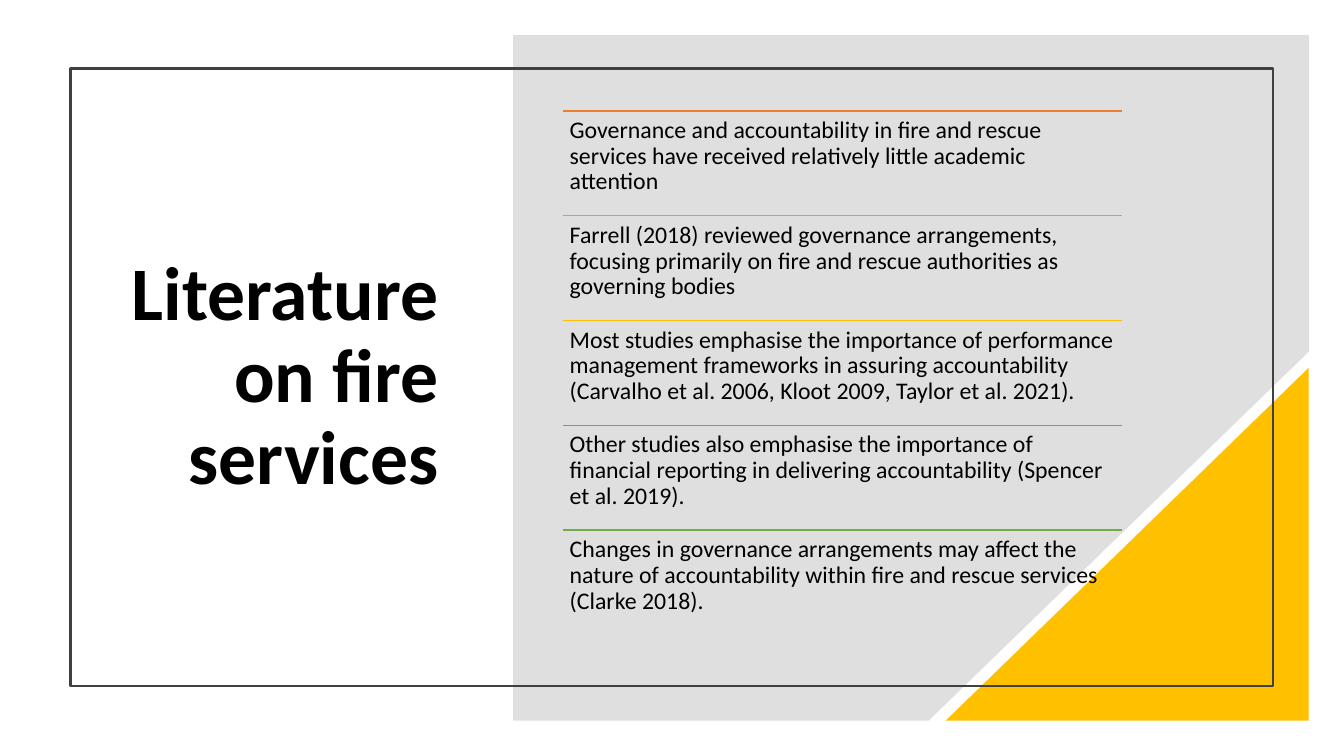
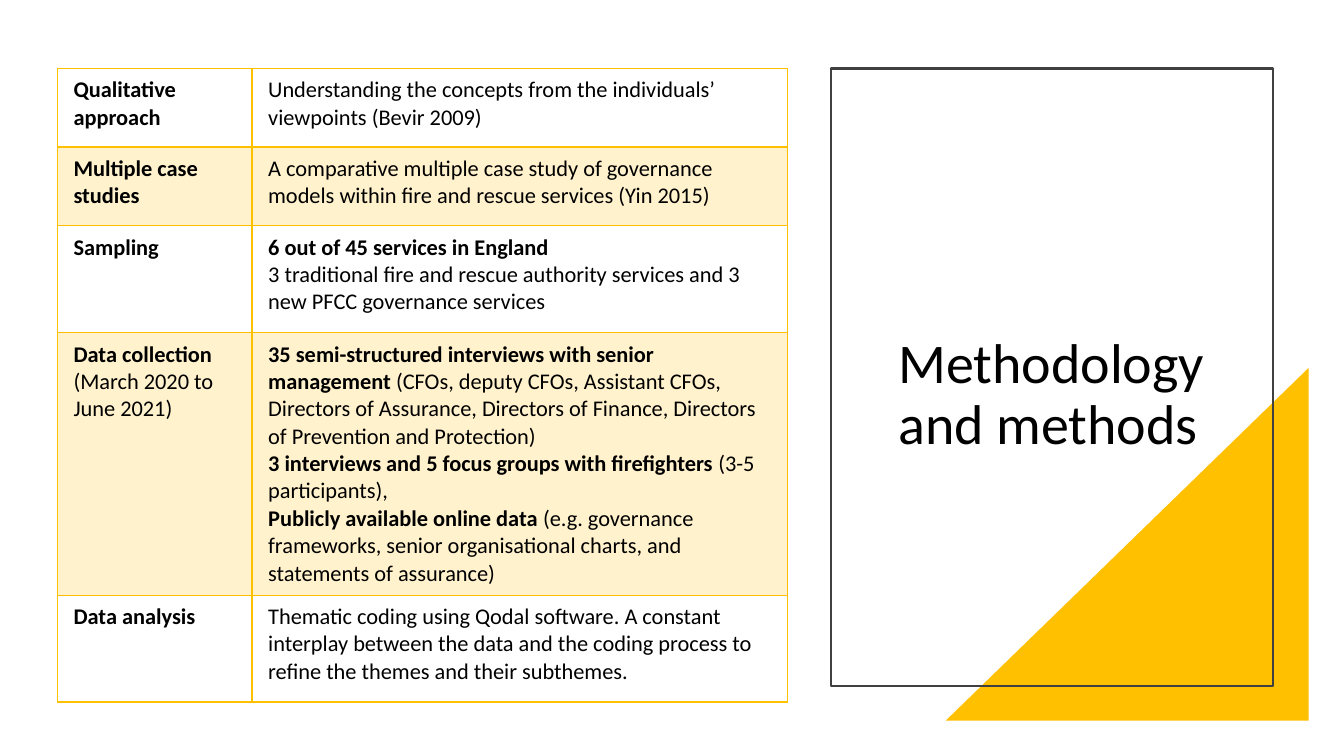
from dataclasses import dataclass

import lxml.etree
import pptx
import pptx.dml.color
import pptx.enum.shapes
import pptx.enum.text
import pptx.oxml.ns
import pptx.util

Inches = pptx.util.Inches
Pt = pptx.util.Pt
RGBColor = pptx.dml.color.RGBColor
MSO_SHAPE = pptx.enum.shapes.MSO_SHAPE
MSO_ANCHOR = pptx.enum.text.MSO_ANCHOR
PP_ALIGN = pptx.enum.text.PP_ALIGN
qn = pptx.oxml.ns.qn

FONT = "Calibri"
BLACK = RGBColor(0x00, 0x00, 0x00)
FRAME = RGBColor(0x40, 0x40, 0x40)
PANEL = RGBColor(0xDF, 0xDF, 0xDF)
GOLD = RGBColor(0xFF, 0xC0, 0x00)
PALE_GOLD = RGBColor(0xFF, 0xF2, 0xCC)
ORANGE = RGBColor(0xED, 0x7D, 0x31)
GREY = RGBColor(0xA5, 0xA5, 0xA5)
BLUE = RGBColor(0x5B, 0x9B, 0xD5)
GREEN = RGBColor(0x70, 0xAD, 0x47)

FRAME_TOP, FRAME_RIGHT, FRAME_HEIGHT = 0.68, 12.63, 6.13
PANEL_OUTLINE = [(5.09, 0.35), (12.98, 0.35), (12.98, 3.49), (9.21, 7.15), (5.09, 7.15)]
FINDING_LEFT, FINDING_TOP, FINDING_WIDTH, FINDING_STEP = 5.58, 1.1, 5.55, 1.04


@dataclass(frozen=True)
class Box:
    left: float
    top: float
    width: float
    height: float

    def lengths(self) -> tuple:
        return tuple(Inches(v) for v in (self.left, self.top, self.width, self.height))


@dataclass(frozen=True)
class Finding:
    color: RGBColor
    text: str


@dataclass(frozen=True)
class Para:
    bold: str = ""
    plain: str = ""


@dataclass(frozen=True)
class MethodRow:
    height: float
    label: list[Para]
    detail: list[Para]


FINDINGS = [
    Finding(ORANGE, "Governance and accountability in fire and rescue services have "
            "received relatively little academic attention"),
    Finding(GREY, "Farrell (2018) reviewed governance arrangements, focusing primarily "
            "on fire and rescue authorities as governing bodies"),
    Finding(GOLD, "Most studies emphasise the importance of performance management "
            "frameworks in assuring accountability (Carvalho et al. 2006, Kloot 2009, "
            "Taylor et al. 2021)."),
    Finding(BLUE, "Other studies also emphasise the importance of financial reporting "
            "in delivering accountability (Spencer et al. 2019)."),
    Finding(GREEN, "Changes in governance arrangements may affect the nature of "
            "accountability within fire and rescue services (Clarke 2018)."),
]

METHODS = [
    MethodRow(0.78, [Para("Qualitative approach")], [
        Para(plain="Understanding the concepts from the individuals’ viewpoints (Bevir 2009)")]),
    MethodRow(0.78, [Para("Multiple case studies")], [
        Para(plain="A comparative multiple case study of governance models within fire "
             "and rescue services (Yin 2015)")]),
    MethodRow(1.06, [Para("Sampling")], [
        Para("6 out of 45 services in England"),
        Para(plain="3 traditional fire and rescue authority services and 3 new PFCC "
             "governance services")]),
    MethodRow(2.6, [Para("Data collection"), Para(plain="(March 2020 to June 2021)")], [
        Para("35 semi-structured interviews with senior management ",
             "(CFOs, deputy CFOs, Assistant CFOs, Directors of Assurance, Directors of "
             "Finance, Directors of Prevention and Protection)"),
        Para("3 interviews and 5 focus groups with firefighters ", "(3-5 participants),"),
        Para("Publicly available online data ",
             "(e.g. governance frameworks, senior organisational charts, and statements "
             "of assurance)")]),
    MethodRow(1.06, [Para("Data analysis")], [
        Para(plain="Thematic coding using Qodal software. A constant interplay between the "
             "data and the coding process to refine the themes and their subthemes.")]),
]


def style_paragraph(p, size: float, bold: bool | None = None) -> None:
    p.font.name = FONT
    p.font.size = Pt(size)
    p.font.bold = bold
    p.font.color.rgb = BLACK


def set_title(s, text: str, box: Box, size: float, bold: bool, align, anchor) -> None:
    title = s.shapes.title
    title.left, title.top, title.width, title.height = box.lengths()
    tf = title.text_frame
    tf.text = text
    tf.word_wrap = True
    tf.auto_size = pptx.enum.text.MSO_AUTO_SIZE.NONE
    tf.vertical_anchor = anchor
    p = tf.paragraphs[0]
    p.alignment = align
    p.line_spacing = 0.9
    style_paragraph(p, size, bold)


def add_backdrop(s, frame_left: float) -> None:
    """Draw the gold corner and the outlined frame over it."""
    corner = s.shapes.add_shape(MSO_SHAPE.RIGHT_TRIANGLE, *Box(9.38, 3.65, 3.6, 3.5).lengths())
    corner.shadow.inherit = False
    corner.fill.solid()
    corner.fill.fore_color.rgb = GOLD
    corner.line.fill.background()
    corner._element.spPr.find(qn("a:xfrm")).set("flipH", "1")

    box = Box(frame_left, FRAME_TOP, FRAME_RIGHT - frame_left, FRAME_HEIGHT)
    frame = s.shapes.add_shape(MSO_SHAPE.RECTANGLE, *box.lengths())
    frame.shadow.inherit = False
    frame.fill.background()
    frame.line.color.rgb = FRAME
    frame.line.width = Pt(1.5)


def add_panel(s) -> None:
    points = [(Inches(x), Inches(y)) for x, y in PANEL_OUTLINE]
    builder = s.shapes.build_freeform(*points[0])
    builder.add_line_segments(points[1:])
    panel = builder.convert_to_shape()
    panel.shadow.inherit = False
    panel.fill.solid()
    panel.fill.fore_color.rgb = PANEL
    panel.line.fill.background()


def add_finding(s, finding: Finding, top: float) -> None:
    box = Box(FINDING_LEFT, top, FINDING_WIDTH, FINDING_STEP)
    left, y, width, _ = box.lengths()
    rule = s.shapes.add_connector(
        pptx.enum.shapes.MSO_CONNECTOR.STRAIGHT, left, y, left + width, y)
    rule.line.color.rgb = finding.color
    rule.line.width = Pt(1)
    lxml.etree.SubElement(rule._element.spPr, qn("a:effectLst"))

    tf = s.shapes.add_textbox(*box.lengths()).text_frame
    tf.word_wrap = True
    tf.margin_left = tf.margin_top = tf.margin_right = tf.margin_bottom = Inches(0.07)
    p = tf.paragraphs[0]
    p.text = finding.text
    p.line_spacing = 0.9
    style_paragraph(p, 17)


def set_border(cell, side: str, width: float) -> None:
    ln = lxml.etree.SubElement(
        cell._tc.get_or_add_tcPr(), qn(f"a:ln{side}"), w=str(Pt(width)))
    fill = lxml.etree.SubElement(ln, qn("a:solidFill"))
    lxml.etree.SubElement(fill, qn("a:srgbClr"), val=str(GOLD))


def fill_cell(cell, paras: list[Para], row: int) -> None:
    cell.margin_left = cell.margin_right = Inches(0.16)
    cell.margin_top = cell.margin_bottom = Inches(0.08)
    heavy_sides = {0: "B", 1: "T"}
    for side in "LRTB":
        set_border(cell, side, 2 if heavy_sides.get(row) == side else 1)
    if row % 2:
        cell.fill.solid()
        cell.fill.fore_color.rgb = PALE_GOLD
    else:
        cell.fill.background()
    tf = cell.text_frame
    for i, para in enumerate(paras):
        p = tf.add_paragraph() if i else tf.paragraphs[0]
        style_paragraph(p, 16)
        for text, bold in ((para.bold, True), (para.plain, False)):
            if text:
                r = p.add_run()
                r.text = text
                r.font.bold = bold


def add_methods_table(s) -> None:
    box = Box(0.57, FRAME_TOP, 7.24, sum(m.height for m in METHODS))
    table = s.shapes.add_table(len(METHODS), 2, *box.lengths()).table
    table.first_row = table.horz_banding = False
    for column, width in zip(table.columns, (1.93, 5.31)):
        column.width = Inches(width)
    for i, method in enumerate(METHODS):
        table.rows[i].height = Inches(method.height)
        fill_cell(table.cell(i, 0), method.label, i)
        fill_cell(table.cell(i, 1), method.detail, i)


def build_literature(s) -> None:
    set_title(s, "Literature on fire services", Box(1.1, 1.3, 3.35, 4.9), 54, True,
              PP_ALIGN.RIGHT, MSO_ANCHOR.MIDDLE)
    add_panel(s)
    add_backdrop(s, 0.7)
    for i, finding in enumerate(FINDINGS):
        add_finding(s, finding, FINDING_TOP + i * FINDING_STEP)


def build_methodology(s) -> None:
    set_title(s, "Methodology and methods", Box(8.81, 1.16, 3.5, 3.42), 40, False,
              PP_ALIGN.LEFT, MSO_ANCHOR.BOTTOM)
    add_backdrop(s, 8.24)
    add_methods_table(s)


def main() -> None:
    prs = pptx.Presentation()
    prs.slide_width, prs.slide_height = Inches(13.33), Inches(7.5)
    title_only = prs.slide_layouts[5]
    for build in (build_literature, build_methodology):
        build(prs.slides.add_slide(title_only))
    prs.save("out.pptx")


if __name__ == "__main__":
    main()
